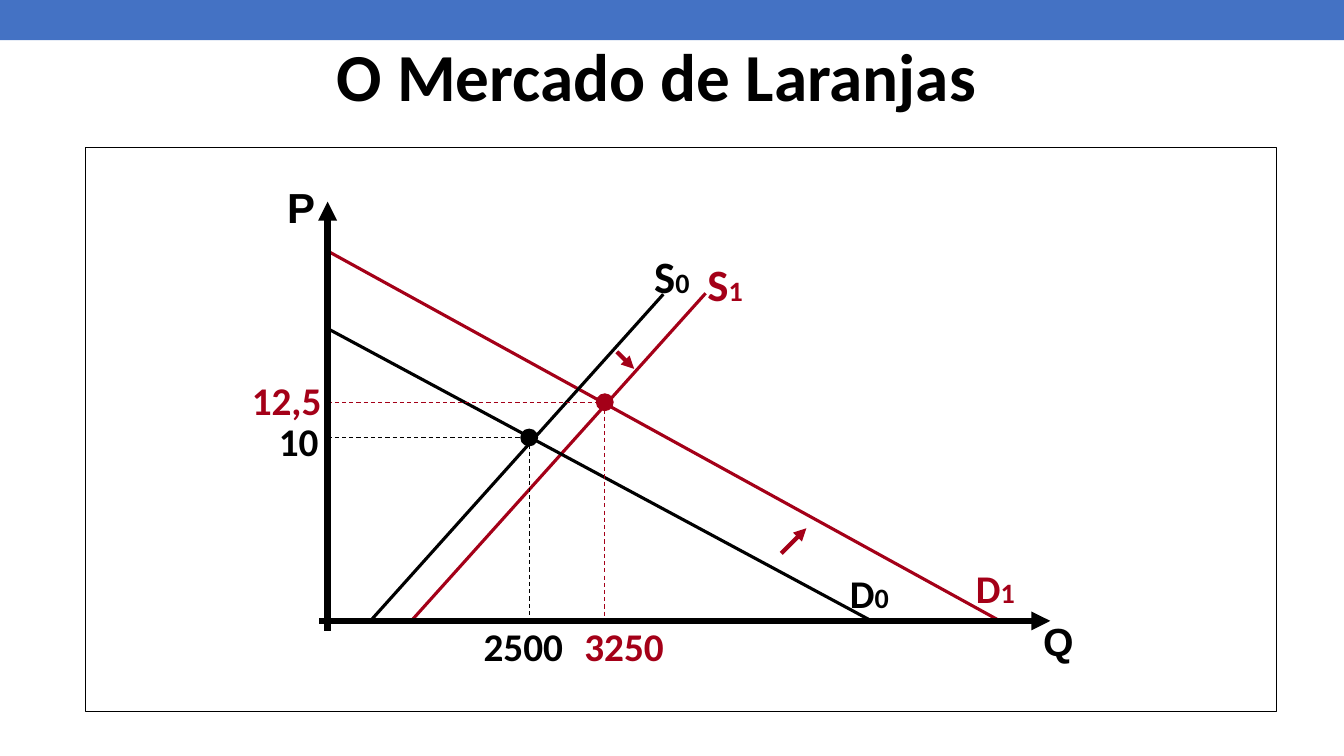
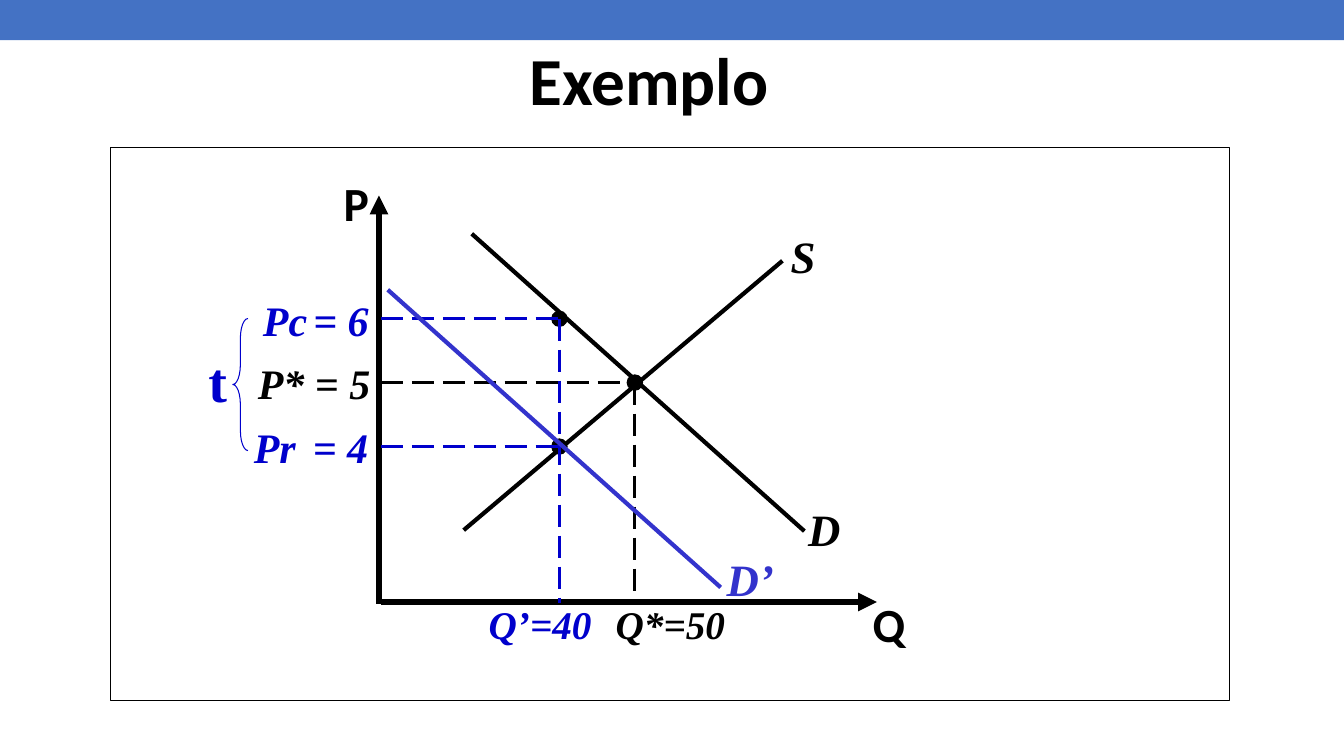
import dataclasses

import pptx
import pptx.dml.color
import pptx.enum.dml
import pptx.enum.shapes
import pptx.enum.text
import pptx.oxml.ns
import pptx.util
from lxml import etree

Pt = pptx.util.Pt
SHAPE = pptx.enum.shapes.MSO_SHAPE
HOLDER = pptx.enum.shapes.PP_PLACEHOLDER
DASH = pptx.enum.dml.MSO_LINE


@dataclasses.dataclass(frozen=True)
class Theme:
    width: float = 960
    height: float = 540
    band_height: float = 28.8
    band: str = "4472C4"
    white: str = "FFFFFF"
    black: str = "000000"
    red: str = "A40018"
    blue: str = "0000CC"
    demand_blue: str = "3333CC"
    sans: str = "Calibri"
    axis_font: str = "Arial"
    serif: str = "Times New Roman"
    title: float = 48
    tax: float = 40
    axis_name: float = 34
    curve: float = 32
    price: float = 30
    value: float = 28
    index: float = 20
    axis_line: float = 4.5
    thin: float = 0.75


T = Theme()


def rgb(color):
    return pptx.dml.color.RGBColor.from_string(color)


def add_run(p, text, size, color, font, italic=False):
    r = p.add_run()
    r.text = text
    r.font.name = font
    r.font.size = Pt(size)
    r.font.color.rgb = rgb(color)
    r.font.bold = True
    r.font.italic = italic


def add_shape(s, kind, x, y, w, h, fill=None, line=None, line_width=T.thin):
    sp = s.shapes.add_shape(kind, Pt(x), Pt(y), Pt(w), Pt(h))
    sp.shadow.inherit = False
    if fill:
        sp.fill.solid()
        sp.fill.fore_color.rgb = rgb(fill)
    else:
        sp.fill.background()
    if line:
        sp.line.color.rgb = rgb(line)
        sp.line.width = Pt(line_width)
    else:
        sp.line.fill.background()
    return sp


def add_line(s, start, end, color, width, dash=None, arrow=False):
    ends = [Pt(v) for v in (*start, *end)]
    c = s.shapes.add_connector(pptx.enum.shapes.MSO_CONNECTOR.STRAIGHT, *ends)
    c.line.color.rgb = rgb(color)
    c.line.width = Pt(width)
    if dash:
        c.line.dash_style = dash
    qn = pptx.oxml.ns.qn
    if arrow:
        etree.SubElement(c.line._get_or_add_ln(), qn("a:tailEnd"), type="triangle")
    etree.SubElement(c.element.spPr, qn("a:effectLst"))


def add_dot(s, point, size, color):
    x, y = point
    add_shape(s, SHAPE.OVAL, x - size / 2, y - size / 2, size, size, color, color)


def add_guides(s, point, origin, color, width, dash):
    """Dashed lines from a point to the price and quantity axes."""
    x, y = point
    add_line(s, (origin[0], y), point, color, width, dash)
    add_line(s, point, (x, origin[1]), color, width, dash)


def add_label(s, x, y, text, size, color, font=T.sans, w=60, italic=False,
              index="", tab=None):
    box = s.shapes.add_textbox(Pt(x), Pt(y), Pt(w), Pt(1.22 * size + 7.2))
    tf = box.text_frame
    tf.word_wrap = True
    p = tf.paragraphs[0]
    if tab:
        qn = pptx.oxml.ns.qn
        stops = etree.SubElement(p._p.get_or_add_pPr(), qn("a:tabLst"))
        etree.SubElement(stops, qn("a:tab"), pos=str(Pt(tab)), algn="l")
    add_run(p, text, size, color, font, italic)
    if index:
        add_run(p, index, T.index, color, font, italic)


def add_slide(prs, title, title_box, frame_box):
    s = prs.slides.add_slide(prs.slide_layouts.get_by_name("Title Only"))
    sp = s.shapes.title
    sp.left, sp.top, sp.width, sp.height = [Pt(v) for v in title_box]
    tf = sp.text_frame
    tf.auto_size = pptx.enum.text.MSO_AUTO_SIZE.NONE
    tf.vertical_anchor = pptx.enum.text.MSO_ANCHOR.MIDDLE
    p = tf.paragraphs[0]
    p.alignment = pptx.enum.text.PP_ALIGN.CENTER
    add_run(p, title, T.title, T.black, T.sans)
    add_shape(s, SHAPE.RECTANGLE, *frame_box, T.white, T.black)
    return s


def trim_template(prs):
    """Keep one layout, without date, footer and slide number."""
    for layout in list(prs.slide_layouts):
        if layout.name != "Title Only":
            prs.slide_layouts.remove(layout)
    unused = (HOLDER.DATE, HOLDER.FOOTER, HOLDER.SLIDE_NUMBER)
    for page in (prs.slide_master, prs.slide_layouts[0]):
        for sp in list(page.placeholders):
            if sp.placeholder_format.type in unused:
                sp.element.getparent().remove(sp.element)


def add_master_band(prs, s):
    """Draw the top band on a slide, then move it to the master."""
    band = add_shape(s, SHAPE.RECTANGLE, 0, 0, T.width, T.band_height, T.band)
    prs.slide_master.element.cSld.spTree.insert(2, band.element)


def orange_market(prs):
    s = add_slide(prs, "O Mercado de Laranjas",
                  (146.4, 11.5, 645, 84), (61.2, 105.4, 850.7, 403.2))
    origin = (234, 443.5)
    left, bottom = origin

    curves = [((left, 179.3), (714.2, bottom), T.red),
              ((293.8, bottom), (504, 209.5), T.red),
              ((264.6, bottom), (473.8, 210.2), T.black),
              ((left, 234.7), (622.5, bottom), T.black)]
    for start, end, color in curves:
        add_line(s, start, end, color, 2.25)
    for start, end in [((558, 395.3), (576, 377.3)),
                       ((440.6, 251.3), (453, 263.5))]:
        add_line(s, start, end, T.red, 3, arrow=True)

    for point, color in [((378, 312.5), T.black), ((432, 287.3), T.red)]:
        add_guides(s, point, origin, color, T.thin, DASH.DASH)
        add_dot(s, point, 12, color)

    add_line(s, (left, 450.7), (left, 144), T.black, T.axis_line, arrow=True)
    add_line(s, (228.2, bottom), (750.2, bottom), T.black, T.axis_line, arrow=True)
    add_label(s, 198, 126, "P", T.price, T.black, T.axis_font, w=36)
    add_label(s, 738, 437.5, "Q", T.value, T.black, T.axis_font)

    for x, y, text, color in [(192.2, 294.5, "10", T.black),
                              (172.8, 265, "12,5", T.red),
                              (338.4, 440.8, "2500", T.black),
                              (410.4, 440.8, "3250", T.red)]:
        add_label(s, x, y, text, T.value, color, w=80)
    for x, y, name, index, size, color in [
            (460.2, 174.2, "S", "0", T.curve, T.black),
            (498.2, 180, "S", "1", T.curve, T.red),
            (600, 403, "D", "0", T.value, T.black),
            (690, 399.6, "D", "1", T.value, T.red)]:
        add_label(s, x, y, name, size, color, index=index)
    return s


def tax_example(prs):
    s = add_slide(prs, "Exemplo", (17.3, 27, 892.8, 58.3),
                  (78.8, 105.4, 799.7, 395))
    origin = (272, 431)
    left, bottom = origin
    paid, balance, received = (399.6, 227.7), (453.5, 273.3), (399.6, 319)

    for start, end in [((331.2, 378.7), (558.9, 186.3)),
                       ((337, 167), (574.6, 379.4))]:
        add_line(s, start, end, T.black, 3)
    add_line(s, (270.7, 431.3), (270.7, 139.7), T.black, T.axis_line, arrow=True)
    add_line(s, (left, 430), (626.4, 430), T.black, T.axis_line, arrow=True)

    for point in (paid, balance, received):
        add_dot(s, point, 11, T.black)
    add_guides(s, balance, origin, T.black, 2, DASH.LONG_DASH)
    add_guides(s, paid, origin, T.blue, 2, DASH.LONG_DASH)
    add_line(s, (left, received[1]), received, T.blue, 2, DASH.LONG_DASH)
    add_line(s, (277, 207), (514.8, 419.6), T.demand_blue, 3)

    brace = add_shape(s, SHAPE.LEFT_BRACE, 166.3, 227.5, 10.8, 94.3, line=T.blue)
    brace.adjustments[0] = 1.31

    add_label(s, 238.3, 121, "P", T.axis_name, T.black)
    add_label(s, 616.3, 421.2, "Q", T.axis_name, T.black)
    add_label(s, 141.8, 244, "t", T.tax, T.blue, T.serif, w=36)
    for x, y, text, size, color, tab in [
            (570.2, 355, "D", T.curve, T.black, None),
            (557.7, 159.8, "S", T.curve, T.black, None),
            (512, 390.6, "D’", T.curve, T.demand_blue, None),
            (177.1, 252, "P* = 5", T.price, T.black, None),
            (174.2, 297.4, "Pr\t= 4", T.price, T.blue, 42.2),
            (180.7, 206.6, "Pc\t= 6", T.price, T.blue, 36),
            (432.7, 425.3, "Q*=50", T.value, T.black, None),
            (342, 425.3, "Q’=40", T.value, T.blue, None)]:
        add_label(s, x, y, text, size, color, T.serif, w=104, italic=True, tab=tab)


def main():
    prs = pptx.Presentation()
    prs.slide_width, prs.slide_height = Pt(T.width), Pt(T.height)
    trim_template(prs)
    add_master_band(prs, orange_market(prs))
    tax_example(prs)
    prs.save("out.pptx")


if __name__ == "__main__":
    main()
